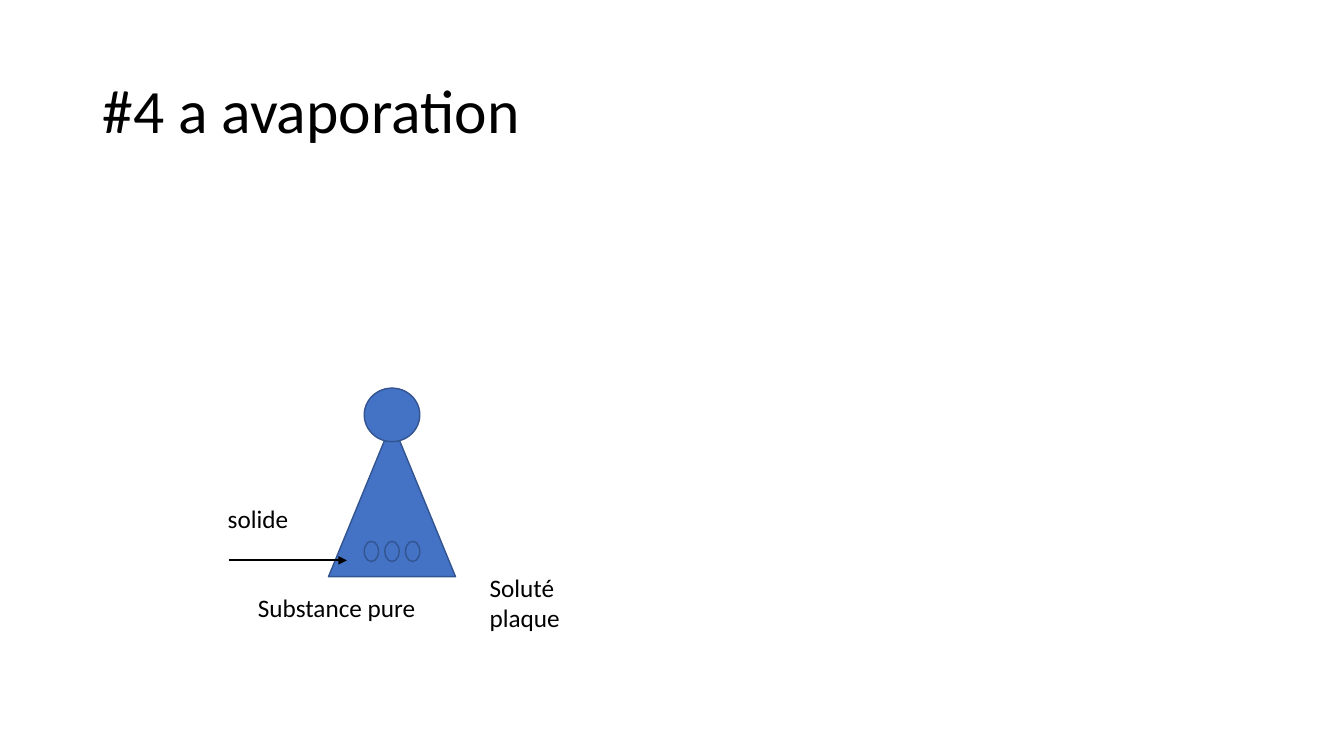
from lxml import etree
from pptx import Presentation
from pptx.dml.color import RGBColor
from pptx.enum.shapes import MSO_CONNECTOR, MSO_SHAPE
from pptx.enum.text import MSO_ANCHOR
from pptx.oxml.ns import qn
from pptx.util import Cm, Pt

STRAIGHT = MSO_CONNECTOR.STRAIGHT
TRIANGLE, OVAL = MSO_SHAPE.ISOSCELES_TRIANGLE, MSO_SHAPE.OVAL
GRAIN = MSO_SHAPE.FLOWCHART_CONNECTOR
TOP, MIDDLE = MSO_ANCHOR.TOP, MSO_ANCHOR.MIDDLE
BLUE, DARK_BLUE, BLACK = "4472C4", "325491", "000000"


def color(value):
    return RGBColor.from_string(value)


def add_text(s, text, x, y, w, h, size=18, anchor=TOP, spacing=1.0):
    tf = s.shapes.add_textbox(Cm(x), Cm(y), Cm(w), Cm(h)).text_frame
    tf.word_wrap = True
    tf.vertical_anchor = anchor
    p = tf.paragraphs[0]
    p.line_spacing = spacing
    r = p.add_run()
    r.text = text
    r.font.name = "Calibri"
    r.font.size = Pt(size)
    r.font.color.rgb = color(BLACK)


def add_blue_shape(s, kind, x, y, w, h):
    sp = s.shapes.add_shape(kind, Cm(x), Cm(y), Cm(w), Cm(h))
    sp.shadow.inherit = False
    sp.fill.solid()
    sp.fill.fore_color.rgb = color(BLUE)
    sp.line.color.rgb = color(DARK_BLUE)
    sp.line.width = Pt(1)


def add_arrow(s, x1, y1, x2, y2):
    line = s.shapes.add_connector(STRAIGHT, Cm(x1), Cm(y1), Cm(x2), Cm(y2))
    line.line.color.rgb = color(BLACK)
    line.line.width = Pt(1.5)
    etree.SubElement(line.line._get_or_add_ln(), qn("a:tailEnd"), type="triangle")
    etree.SubElement(line._element.spPr, qn("a:effectLst"))


def add_title(s, x, y, w, h):
    add_text(s, "#4 a avaporation", x, y, w, h, size=44, anchor=MIDDLE, spacing=0.9)


def add_flask(s, x, y, w, h):
    """Flask with a round top and three grains of solid near its base."""
    head_w, grain_w, grain_step = 1.4, 0.36, 0.52
    head_x = x + (w - head_w) / 2
    add_blue_shape(s, TRIANGLE, x, y + 0.86, w, h - 0.86)
    add_blue_shape(s, OVAL, head_x, y, head_w, 1.35)
    for i in range(3):
        add_blue_shape(s, GRAIN, head_x + i * grain_step, y + h - 0.89, grain_w, 0.51)


def add_labels(s, x, y, w, h):
    """Labels and arrow around the flask that fills the given box."""
    add_arrow(s, x - 2.51, y + h - 0.41, x + 0.46, y + h - 0.41)
    add_text(s, "solide", x - 2.79, y + h - 1.98, 2.57, 1.02)
    add_text(s, "Substance pure", x - 2.03, y + h + 0.28, 5.87, 1.02)
    add_text(s, "Soluté plaque", x + w + 0.61, y + h - 0.23, 4, 1.8)


def main():
    prs = Presentation()
    prs.slide_width, prs.slide_height = Cm(33.87), Cm(19.05)
    s = prs.slides.add_slide(prs.slide_layouts[6])
    flask_box = (8.28, 9.78, 3.2, 4.75)
    add_title(s, 2.33, 1.02, 29.21, 3.68)
    add_flask(s, *flask_box)
    add_labels(s, *flask_box)
    prs.save("out.pptx")


if __name__ == "__main__":
    main()
